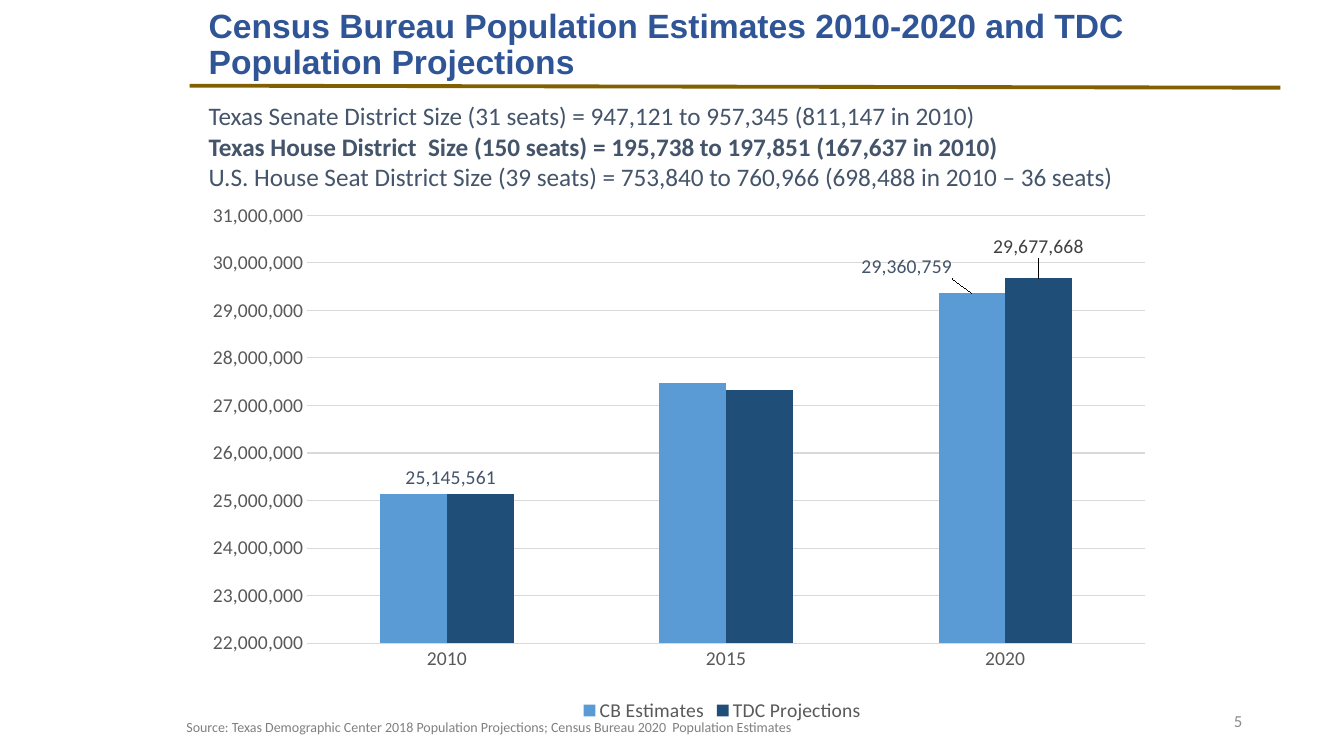
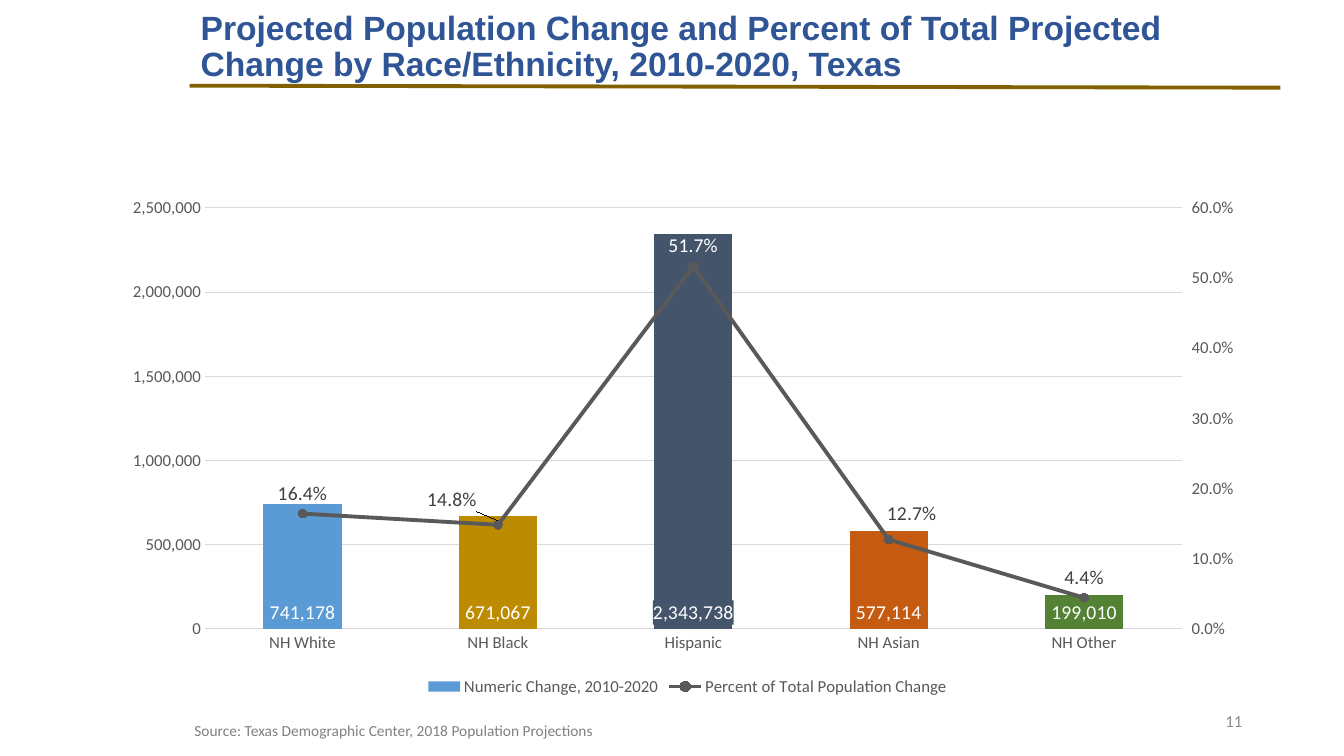
import collections

import pptx
import pptx.chart.data
import pptx.dml.color
import pptx.enum.chart
import pptx.enum.shapes
import pptx.enum.text
import pptx.oxml
import pptx.oxml.ns
import pptx.util

Box = collections.namedtuple("Box", "left top width height")

BLUE, NAVY, SLATE, GOLD = "5B9BD5", "1F4E79", "44546A", "BC8B00"
ORANGE, GREEN, WHITE = "C55A11", "548235", "FFFFFF"
TITLE_BLUE, RULE_BROWN = "2F5597", "806000"
AXIS_GRAY, GRID_GRAY, LABEL_GRAY = "595959", "D9D9D9", "404040"
SOURCE_GRAY, NUMBER_GRAY = "808080", "8C8C8C"
NUMBER_BOX = Box(9.42, 6.95, 3, 0.4)
CHART_XMLNS = pptx.oxml.ns.nsdecls("c", "a")
ABOVE = pptx.enum.chart.XL_LABEL_POSITION.ABOVE
OUTSIDE_END = pptx.enum.chart.XL_LABEL_POSITION.OUTSIDE_END
INSIDE_BASE = pptx.enum.chart.XL_LABEL_POSITION.INSIDE_BASE
NO_TICK = pptx.enum.chart.XL_TICK_MARK.NONE


def color(value):
    """Turn a hex string into a colour."""
    return pptx.dml.color.RGBColor.from_string(value)


def inches(box):
    """Turn the numbers of a box into lengths."""
    return [pptx.util.Inches(value) for value in box]


def paint(fill, value):
    """Make a fill solid in one colour."""
    fill.solid()
    fill.fore_color.rgb = color(value)


def style_font(font, size, ink, bold=False, name="Calibri"):
    """Set the face, size, colour and weight of a font."""
    font.name = name
    font.size = pptx.util.Pt(size)
    font.bold = bold
    font.color.rgb = color(ink)


def write(para, text, align="LEFT", spacing=None, **style):
    """Write one formatted run of text into a paragraph."""
    para.alignment = getattr(pptx.enum.text.PP_ALIGN, align)
    if spacing:
        para.line_spacing = spacing
    span = para.add_run()
    span.text = text
    style_font(span.font, **style)


def add_text(page, box, lines, fill=None, anchor="TOP", wrap=True, **style):
    """Add a text box with one paragraph for each (text, bold) line."""
    shape = page.shapes.add_textbox(*inches(box))
    if fill:
        paint(shape.fill, fill)
    frame = shape.text_frame
    frame.word_wrap = wrap
    frame.vertical_anchor = getattr(pptx.enum.text.MSO_ANCHOR, anchor)
    for index, (text, bold) in enumerate(lines):
        para = frame.add_paragraph() if index else frame.paragraphs[0]
        write(para, text, bold=bold, **style)


def add_rule_to_layout(layout, page):
    """Draw the brown title rule and hand it over to the layout."""
    rule = page.shapes.add_connector(
        pptx.enum.shapes.MSO_CONNECTOR.STRAIGHT, *inches((1.88, 0.85, 12.7, 0.87))
    )
    rule.line.color.rgb = color(RULE_BROWN)
    rule.line.width = pptx.util.Pt(2.75)
    effects = f"<a:effectLst {pptx.oxml.ns.nsdecls('a')}/>"
    rule.element.spPr.append(pptx.oxml.parse_xml(effects))
    layout.shapes.element.append(rule.element)


def add_page(deck, layout, title_box, title, number):
    """Add a page with its title and number."""
    page = deck.slides.add_slide(layout)
    heading = page.shapes.title
    heading.left, heading.top, heading.width, heading.height = inches(title_box)
    frame = heading.text_frame
    frame.word_wrap = True
    frame.auto_size = pptx.enum.text.MSO_AUTO_SIZE.NONE
    frame.vertical_anchor = pptx.enum.text.MSO_ANCHOR.MIDDLE
    write(frame.paragraphs[0], title, spacing=0.9, size=24, ink=TITLE_BLUE,
          bold=True, name="Arial")
    add_text(page, NUMBER_BOX, [(number, False)], anchor="MIDDLE",
             align="RIGHT", size=12, ink=NUMBER_GRAY)
    return page


def arrange(parent, index, inner=False, edge=False, **places):
    """Give a chart part a manual layout, in fractions of the chart."""
    for old in parent.xpath("./c:layout"):
        parent.remove(old)
    parts = '<c:layoutTarget val="inner"/>' if inner else ""
    if edge:
        parts += '<c:xMode val="edge"/><c:yMode val="edge"/>'
    parts += "".join(f'<c:{key} val="{value}"/>' for key, value in places.items())
    parent.insert(index, pptx.oxml.parse_xml(
        f"<c:layout {CHART_XMLNS}><c:manualLayout>{parts}</c:manualLayout></c:layout>"
    ))


def label_point(series, index, position, ink, x=0, y=0, text=None, fill=None):
    """Label one point, shifted from its usual place."""
    label = series.points[index].data_label
    if text:
        write(label.text_frame.paragraphs[0], text, align="CENTER", size=14, ink=ink)
    else:
        style_font(label.font, 14, ink)
    label.position = position
    element = series.data_labels._element.xpath(f"./c:dLbl[c:idx/@val='{index}']")[0]
    if fill:
        element.xpath("./c:txPr")[0].addprevious(pptx.oxml.parse_xml(
            f'<c:spPr {CHART_XMLNS}><a:solidFill><a:srgbClr val="{fill}"/>'
            "</a:solidFill></c:spPr>"
        ))
    if x or y:
        arrange(element, 1, x=x, y=y)


def label_series(series, position, ink, number_format):
    """Show the value at every point of a series."""
    labels = series.data_labels
    labels.show_value = True
    labels.position = position
    labels.number_format = number_format
    labels.number_format_is_linked = False
    style_font(labels.font, 14, ink)


def show_leader_lines(series):
    """Join moved labels to their columns and hide the other labels."""
    series.data_labels.show_value = False
    series.data_labels._element.append(pptx.oxml.parse_xml(
        f'<c:extLst {CHART_XMLNS}><c:ext uri="{{CE6537A1-D6FC-4f65-9D91-7224C49458BB}}"'
        ' xmlns:c15="http://schemas.microsoft.com/office/drawing/2012/chart">'
        '<c15:showLeaderLines val="1"/></c:ext></c:extLst>'
    ))


def add_columns(page, box, categories, series, size, gap, scale, plot_area):
    """Add a clustered column chart with the shared axis and legend style."""
    data = pptx.chart.data.CategoryChartData()
    data.categories = categories
    for name, values, number_format in series:
        data.add_series(name, values, number_format)
    chart = page.shapes.add_chart(
        pptx.enum.chart.XL_CHART_TYPE.COLUMN_CLUSTERED, *inches(box), data
    ).chart
    chart.has_title = False
    style_font(chart.font, size, AXIS_GRAY)
    chart.has_legend = True
    chart.legend.position = pptx.enum.chart.XL_LEGEND_POSITION.BOTTOM
    chart.legend.include_in_layout = False
    style_font(chart.legend.font, size, AXIS_GRAY)
    plot = chart.plots[0]
    plot.vary_by_categories = False
    plot.gap_width, plot.overlap = gap, 0
    values = chart.value_axis
    values.minimum_scale, values.maximum_scale, values.major_unit = scale
    values.tick_labels.number_format = "#,##0"
    values.tick_labels.number_format_is_linked = False
    values.format.line.fill.background()
    lines = [values.major_gridlines.format.line, chart.category_axis.format.line]
    for line in lines:
        line.color.rgb = color(GRID_GRAY)
        line.width = pptx.util.Pt(0.75)
    for axis in (values, chart.category_axis):
        axis.major_tick_mark = NO_TICK
        style_font(axis.tick_labels.font, size, AXIS_GRAY)
    area = chart._chartSpace.xpath("./c:chart/c:plotArea")[0]
    arrange(area, 0, inner=True, edge=True, **dict(zip("xywh", plot_area)))
    return chart


def move_to_right_axis(chart, size):
    """Turn the second series into a line on a percent axis at the right."""
    bars = chart._chartSpace.xpath(".//c:barChart")[0]
    moved = bars.xpath("./c:ser")[1]
    for flag in moved.xpath("./c:invertIfNegative"):
        moved.remove(flag)
    lines = pptx.oxml.parse_xml(
        f'<c:lineChart {CHART_XMLNS}><c:grouping val="standard"/>'
        '<c:varyColors val="0"/><c:marker val="1"/>'
        '<c:axId val="5001"/><c:axId val="5002"/></c:lineChart>'
    )
    lines.insert(2, moved)
    bars.addnext(lines)
    percent_axis = pptx.oxml.parse_xml(
        f'<c:valAx {CHART_XMLNS}><c:axId val="5002"/><c:scaling>'
        '<c:orientation val="minMax"/><c:max val="0.6"/><c:min val="0"/></c:scaling>'
        '<c:delete val="0"/><c:axPos val="r"/>'
        '<c:numFmt formatCode="0.0%" sourceLinked="0"/>'
        '<c:majorTickMark val="out"/><c:minorTickMark val="none"/>'
        '<c:tickLblPos val="nextTo"/><c:spPr><a:ln><a:noFill/></a:ln></c:spPr>'
        f'<c:txPr><a:bodyPr/><a:p><a:pPr><a:defRPr sz="{size * 100}"><a:solidFill>'
        f'<a:srgbClr val="{AXIS_GRAY}"/></a:solidFill><a:latin typeface="Calibri"/>'
        '</a:defRPr></a:pPr></a:p></c:txPr><c:crossAx val="5001"/>'
        '<c:crosses val="max"/><c:crossBetween val="between"/>'
        '<c:majorUnit val="0.1"/></c:valAx>'
    )
    hidden_axis = pptx.oxml.parse_xml(
        f'<c:catAx {CHART_XMLNS}><c:axId val="5001"/><c:scaling>'
        '<c:orientation val="minMax"/></c:scaling><c:delete val="1"/>'
        '<c:axPos val="b"/><c:crossAx val="5002"/><c:crosses val="autoZero"/></c:catAx>'
    )
    last_axis = chart._chartSpace.xpath(".//c:valAx")[-1]
    last_axis.addnext(percent_axis)
    percent_axis.addnext(hidden_axis)
    return chart.plots[1].series[0]


def add_estimates_chart(page, box):
    """Compare estimates with projections for three years."""
    chart = add_columns(
        page, box, ["2010", "2015", "2020"],
        [("CB Estimates", (25145561, 27470056, 29360067), "#,##0"),
         ("TDC Projections", (25145561, 27326193, 29677668), "#,##0")],
        size=14, gap=219, scale=(22000000, 31000000, 1000000),
        plot_area=(0.1, 0.03, 0.9, 0.81),
    )
    arrange(chart.legend._element, 1, edge=True, x=0.39, y=0.94)
    estimates, projections = chart.plots[0].series
    paint(estimates.format.fill, BLUE)
    paint(projections.format.fill, NAVY)
    label_point(estimates, 0, OUTSIDE_END, SLATE, x=0.04)
    label_point(estimates, 2, OUTSIDE_END, SLATE, x=-0.07, y=-0.02, text="29,360,759")
    label_point(projections, 2, OUTSIDE_END, LABEL_GRAY, y=-0.03)
    for series in (estimates, projections):
        show_leader_lines(series)


def add_change_chart(page, box):
    """Show change by group as columns and share of change as a line."""
    change_name, share_name = "Numeric Change, 2010-2020", "Percent of Total Population Change"
    chart = add_columns(
        page, box, ["NH White", "NH Black", "Hispanic", "NH Asian", "NH Other"],
        [(change_name, (741178, 671067, 2343738, 577114, 199010), "#,##0"),
         (share_name, (0.164, 0.148, 0.517, 0.127, 0.044), "0.0%")],
        size=12, gap=150, scale=(0, 2500000, 500000),
        plot_area=(0.08, 0.04, 0.85, 0.82),
    )
    share = move_to_right_axis(chart, size=12)
    change = chart.plots[0].series[0]
    paint(change.format.fill, BLUE)
    for index, fill in enumerate((GOLD, SLATE, ORANGE, GREEN), start=1):
        paint(change.points[index].format.fill, fill)
    label_series(change, INSIDE_BASE, WHITE, "#,##0")
    label_point(change, 2, INSIDE_BASE, WHITE, fill=SLATE)
    share.smooth = False
    share.format.line.color.rgb = color(AXIS_GRAY)
    share.format.line.width = pptx.util.Pt(2.75)
    share.marker.style = pptx.enum.chart.XL_MARKER_STYLE.CIRCLE
    share.marker.size = 6
    paint(share.marker.format.fill, AXIS_GRAY)
    share.marker.format.line.color.rgb = color(AXIS_GRAY)
    label_series(share, ABOVE, LABEL_GRAY, "0.0%")
    label_point(share, 1, ABOVE, LABEL_GRAY, x=-0.04, y=-0.01)
    label_point(share, 2, ABOVE, WHITE)
    label_point(share, 3, ABOVE, LABEL_GRAY, x=0.02, y=-0.01)


def main():
    """Build both pages and save the deck."""
    deck = pptx.Presentation()
    deck.slide_width, deck.slide_height = inches((13.33, 7.5))
    layout = deck.slide_layouts[5]

    page = add_page(deck, layout, Box(1.97, -0.05, 10.82, 1),
                    "Census Bureau Population Estimates 2010-2020 and TDC Population Projections", "5")
    add_rule_to_layout(layout, page)
    add_estimates_chart(page, Box(2.11, 1.98, 9.25, 5.24))
    add_text(page, Box(1.75, 7.08, 9.58, 0.27), [(
        "Source: Texas Demographic Center 2018 Population Projections; "
        "Census Bureau 2020  Population Estimates", False)], size=10, ink=SOURCE_GRAY)
    add_text(page, Box(1.97, 0.95, 9.93, 1.01), [
        ("Texas Senate District Size (31 seats) = 947,121 to 957,345 (811,147 in 2010)", False),
        ("Texas House District  Size (150 seats) = 195,738 to 197,851 (167,637 in 2010)", True),
        ("U.S. House Seat District Size (39 seats) = 753,840 to 760,966 "
         "(698,488 in 2010 – 36 seats)", False),
    ], fill=WHITE, size=18, ink=SLATE)

    page = add_page(deck, layout, Box(1.89, 0.12, 10.84, 0.71),
                    "Projected Population Change and Percent of Total Projected Change "
                    "by Race/Ethnicity, 2010-2020, Texas", "11")
    add_change_chart(page, Box(1.12, 1.86, 11.4, 5.09))
    add_text(page, Box(1.83, 7.1, 4.38, 0.29), [(
        "Source: Texas Demographic Center, 2018 Population Projections", False)],
        wrap=False, size=11, ink=SOURCE_GRAY)
    deck.save("out.pptx")


if __name__ == "__main__":
    main()
